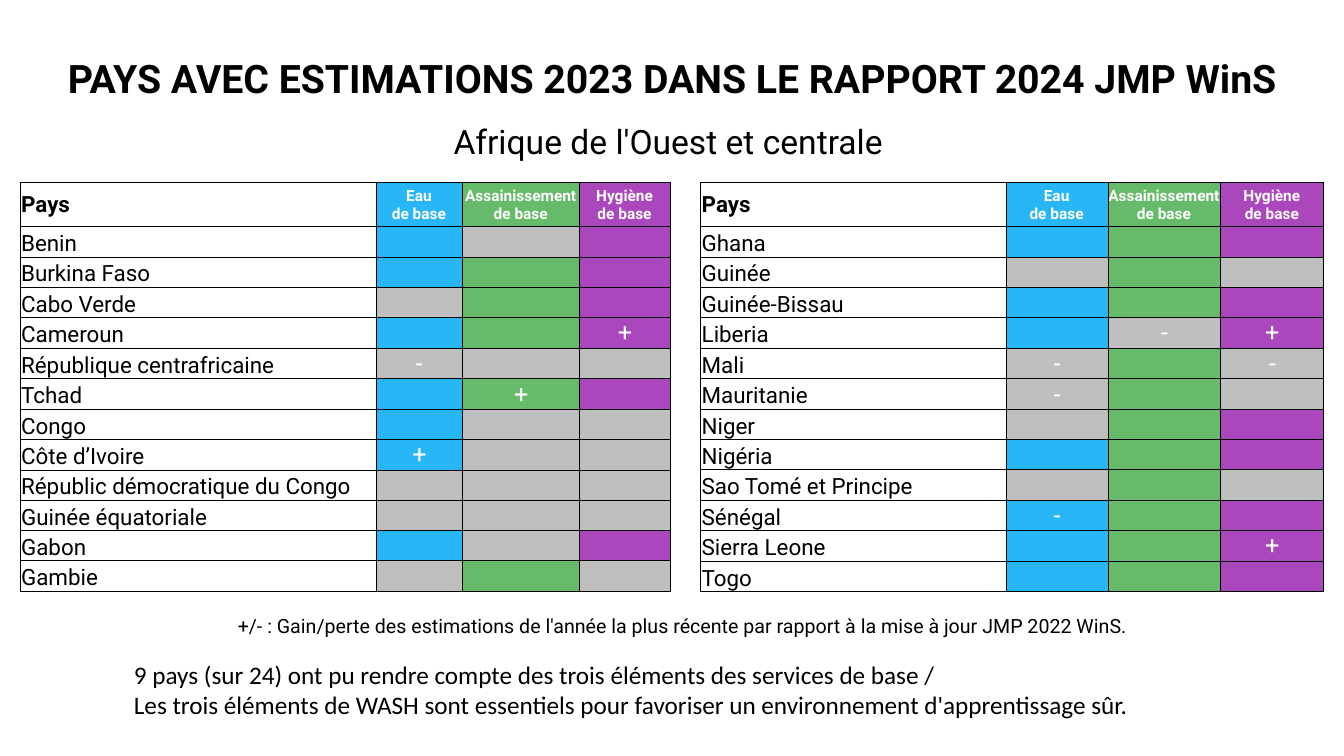
from lxml.etree import SubElement
from pptx import Presentation
from pptx.dml.color import RGBColor
from pptx.enum.text import MSO_ANCHOR as Anchor, MSO_AUTO_SIZE as AutoSize, PP_ALIGN as Align
from pptx.oxml.ns import qn
from pptx.util import Inches, Pt

COLORS = {"black": "000000", "white": "FFFFFF", "water": "29B6F6",
          "sanitation": "66BB6A", "hygiene": "AB47BC", "missing": "BFBFBF"}
SERVICES = ("water", "sanitation", "hygiene")
HEADERS = ("Eau\nde base", "Assainissement de base", "Hygiène\nde base")
HEADER_HEIGHT, ROW_HEIGHT = 0.44, 0.3
HEADER_MARGINS = (0, 0.04, 0.01, 0.04)
BODY_MARGINS = (0.01, 0.01, 0.01, 0)
BOX_MARGINS = (0.1, 0.05, 0.1, 0.05)

WEST_CENTRAL_TABLES = (
    (0.2, (3.53, 0.86, 1.16, 0.9), (
        ("Benin", "1 0 1"),
        ("Burkina Faso", "1 1 1"),
        ("Cabo Verde", "0 1 1"),
        ("Cameroun", "1 1 1+"),
        ("République centrafricaine", "0- 0 0"),
        ("Tchad", "1 1+ 1"),
        ("Congo", "1 0 0"),
        ("Côte d’Ivoire", "1+ 0 0"),
        ("Républic démocratique du Congo", "0 0 0"),
        ("Guinée équatoriale", "0 0 0"),
        ("Gabon", "1 0 1"),
        ("Gambie", "0 1 0"))),
    (6.95, (3.03, 1.01, 1.12, 1.02), (
        ("Ghana", "1 1 1"),
        ("Guinée", "0 1 0"),
        ("Guinée-Bissau", "1 1 1"),
        ("Liberia", "1 0- 1+"),
        ("Mali", "0- 1 0-"),
        ("Mauritanie", "0- 1 0"),
        ("Niger", "0 1 1"),
        ("Nigéria", "1 1 1"),
        ("Sao Tomé et Principe", "0 1 0"),
        ("Sénégal", "1- 1 1"),
        ("Sierra Leone", "1 1 1+"),
        ("Togo", "1 1 1"))),
)


class SlideBuilder:
    """Holds the text style and the slide, and adds each kind of element."""

    def __init__(self, slide, font="Roboto"):
        self.slide = slide
        self.font = font

    def set_margins(self, target, margins):
        for side, value in zip(("left", "top", "right", "bottom"), margins):
            setattr(target, f"margin_{side}", Inches(value))

    def fill_text(self, frame, text, size, color="black", bold=False, align=Align.LEFT, font=None):
        frame.text = text
        values = {"name": font or self.font, "size": Pt(size), "bold": bold}
        for paragraph in frame.paragraphs:
            paragraph.alignment = align
            for run in paragraph.runs:
                for name, value in values.items():
                    setattr(run.font, name, value)
                run.font.color.rgb = RGBColor.from_string(COLORS[color])

    def title(self, text, left, top, width, height):
        shape = self.slide.shapes.title
        box = {"left": left, "top": top, "width": width, "height": height}
        for name, value in box.items():
            setattr(shape, name, Inches(value))
        frame = shape.text_frame
        frame.word_wrap = True
        frame.vertical_anchor = Anchor.MIDDLE
        self.set_margins(frame, BOX_MARGINS)
        self.fill_text(frame, text, 28, bold=True, align=Align.CENTER)
        frame.paragraphs[0].line_spacing = 0.9

    def text(self, text, left, top, width, height, size, font=None):
        shape = self.slide.shapes.add_textbox(*map(Inches, (left, top, width, height)))
        frame = shape.text_frame
        frame.word_wrap = True
        frame.auto_size = AutoSize.SHAPE_TO_FIT_TEXT
        self.set_margins(frame, BOX_MARGINS)
        self.fill_text(frame, text, size, font=font)

    def cell(self, cell, text, fill, margins=BODY_MARGINS, anchor=Anchor.BOTTOM, **style):
        properties = cell._tc.get_or_add_tcPr()
        for side in "LRTB":
            line = SubElement(properties, qn(f"a:ln{side}"), w=str(Pt(0.75)))
            solid = SubElement(line, qn("a:solidFill"))
            SubElement(solid, qn("a:srgbClr"), val=COLORS["black"])
        cell.fill.solid()
        cell.fill.fore_color.rgb = RGBColor.from_string(COLORS[fill])
        self.set_margins(cell, margins)
        cell.vertical_anchor = anchor
        if text:
            self.fill_text(cell.text_frame, text, **style)
        else:
            paragraph = cell.text_frame.paragraphs[0]
            SubElement(paragraph._p, qn("a:endParaRPr"), sz="1200")

    def country_table(self, left, top, widths, countries):
        height = HEADER_HEIGHT + ROW_HEIGHT * len(countries)
        table = self.slide.shapes.add_table(
            len(countries) + 1, len(widths), Inches(left), Inches(top),
            Inches(sum(widths)), Inches(height)).table
        table.first_row = table.horz_banding = False
        for column, width in zip(table.columns, widths):
            column.width = Inches(width)
        for index, row in enumerate(table.rows):
            row.height = Inches(ROW_HEIGHT if index else HEADER_HEIGHT)

        self.cell(table.cell(0, 0), "Pays", "white", anchor=Anchor.MIDDLE, size=16, bold=True)
        for column, (header, service) in enumerate(zip(HEADERS, SERVICES), 1):
            self.cell(table.cell(0, column), header, service, HEADER_MARGINS,
                      size=11, color="white", bold=True, align=Align.CENTER)
        for row, (country, statuses) in enumerate(countries, 1):
            self.cell(table.cell(row, 0), country, "white", size=16)
            for column, (status, service) in enumerate(zip(statuses.split(), SERVICES), 1):
                fill = service if status[0] == "1" else "missing"
                self.cell(table.cell(row, column), status[1:], fill,
                          size=18, color="white", align=Align.CENTER)


def main():
    presentation = Presentation()
    presentation.slide_width = Inches(13.33)
    presentation.slide_height = Inches(7.5)
    builder = SlideBuilder(presentation.slides.add_slide(presentation.slide_layouts[5]))

    builder.title("PAYS AVEC ESTIMATIONS 2023 DANS LE RAPPORT 2024 JMP WinS", 0, 0.25, 13.33, 1.11)
    for left, widths, countries in WEST_CENTRAL_TABLES:
        builder.country_table(left, 1.81, widths, countries)
    builder.text("Afrique de l'Ouest et centrale", 4.4, 1.15, 4.87, 0.5, 24)
    builder.text("+/- : Gain/perte des estimations de l'année la plus récente par rapport "
                 "à la mise à jour JMP 2022 WinS.", 2.26, 6.04, 9.15, 0.34, 14)
    builder.text("9 pays (sur 24) ont pu rendre compte des trois éléments des services de base /\n"
                 "Les trois éléments de WASH sont essentiels pour favoriser un environnement "
                 "d'apprentissage sûr.", 1.23, 6.49, 11.21, 1.01, 18, font="Calibri")
    presentation.save("out.pptx")


if __name__ == "__main__":
    main()
